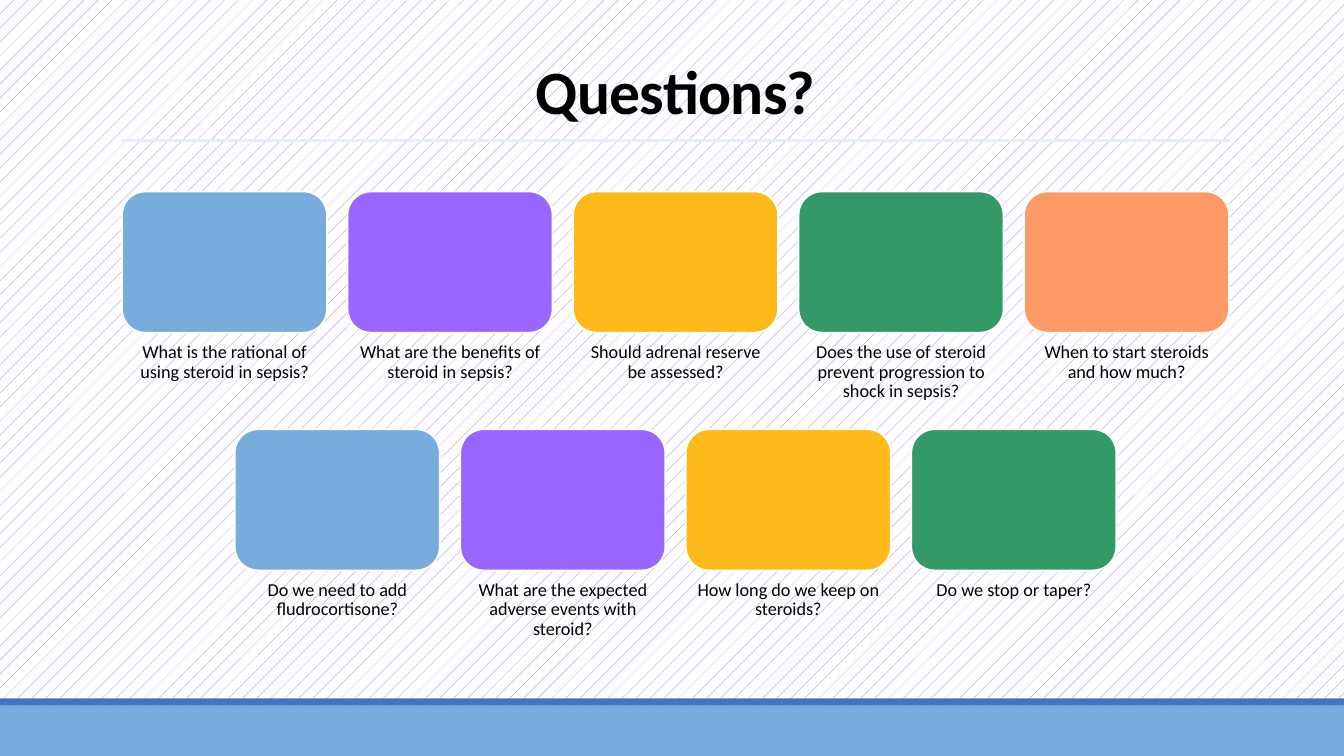
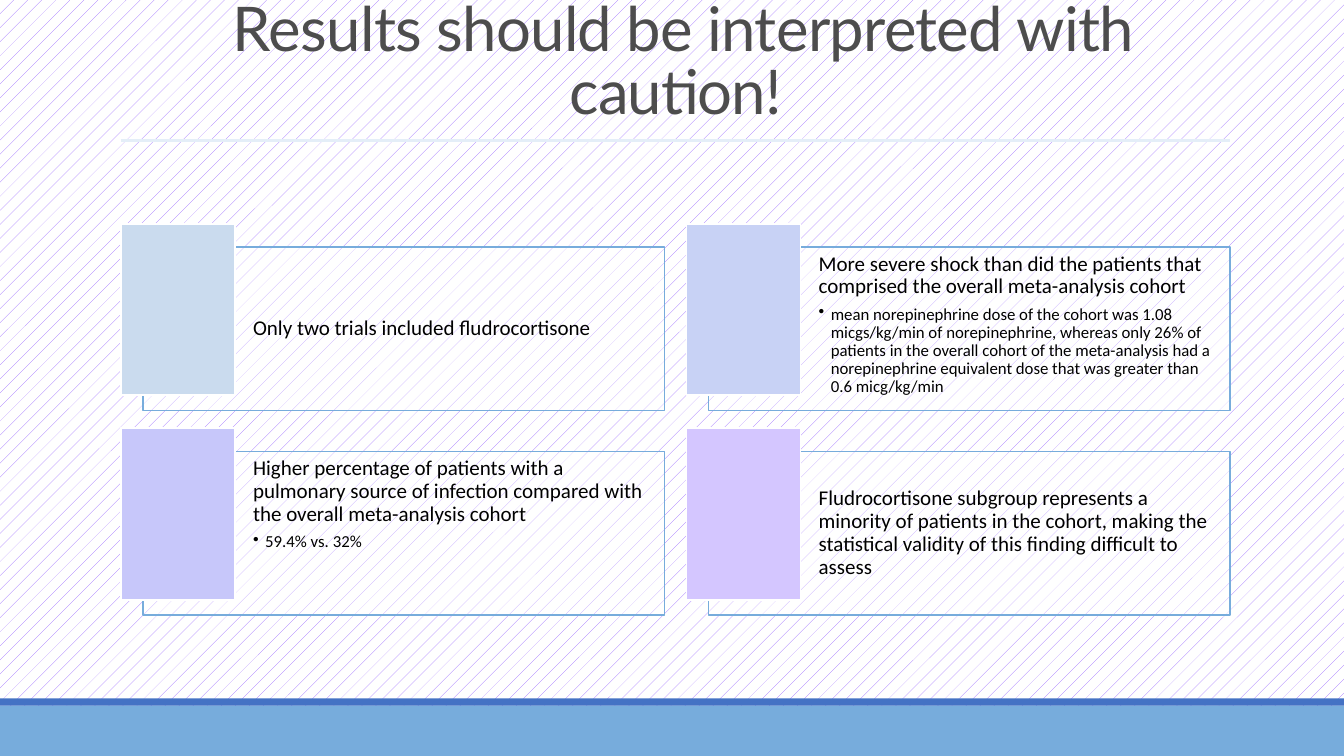
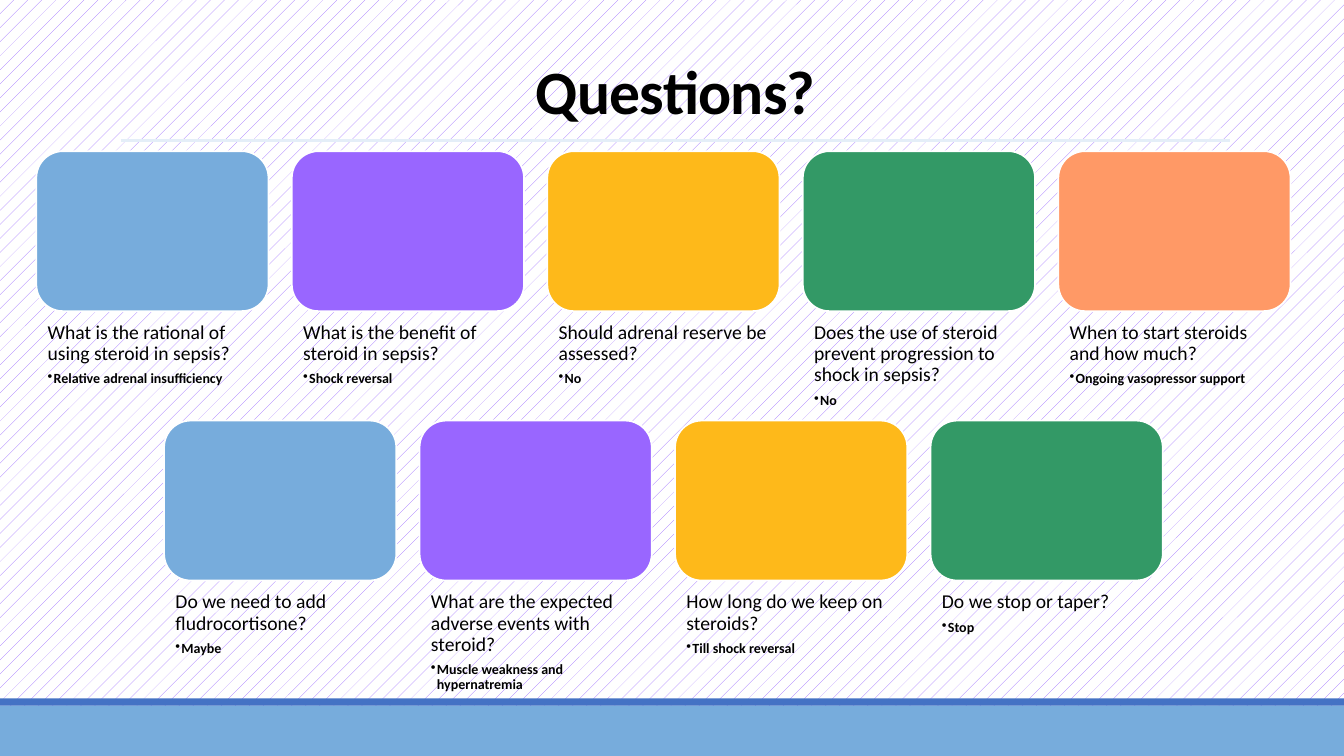
from dataclasses import dataclass
from itertools import zip_longest

from lxml.etree import SubElement
from pptx import Presentation
from pptx.dml.color import RGBColor as RGB
from pptx.enum.dml import MSO_PATTERN as PATTERN
from pptx.enum.shapes import MSO_CONNECTOR as WIRE, MSO_SHAPE as SHAPE
from pptx.enum.text import MSO_ANCHOR as ANCHOR, MSO_AUTO_SIZE as AUTO, PP_ALIGN as ALIGN
from pptx.oxml.ns import qn
from pptx.util import Inches, Pt


@dataclass(frozen=True)
class Theme:
    ink: str = "000000"
    soft: str = "4D4D4D"
    paper: str = "FFFFFF"
    blue: str = "77ACDC"
    strip: str = "4472C4"
    rule: str = "E4EEF8"
    hatch: str = "9966FF"
    tiles: tuple = ("77ACDC", "9966FF", "FEB91A", "339966", "FF9966")
    tabs: tuple = ("CADBEE", "C8D2F5", "C7C7FA", "D4C6FF")
    font: str = "Calibri"
    alt: str = "Lato"
    head: int = 44
    edge: float = 1.25


T = Theme()
WIDE, HIGH = 13.33, 7.5

ASKS = [
    "What is the rational of using steroid in sepsis?",
    "What are the benefits of steroid in sepsis?",
    "Should adrenal reserve be assessed?",
    "Does the use of steroid prevent progression to shock in sepsis?",
    "When to start steroids and how much?",
    "Do we need to add fludrocortisone?",
    "What are the expected adverse events with steroid?",
    "How long do we keep on steroids?",
    "Do we stop or taper?",
]
REASKS = [ASKS[0], "What is the benefit of steroid in sepsis?", *ASKS[2:]]
REPLIES = [
    "Relative adrenal insufficiency", "Shock reversal", "No", "No",
    "Ongoing vasopressor support", "Maybe", "Muscle weakness and hypernatremia",
    "Till shock reversal", "Stop",
]
LIMITS = [
    ("Only two trials included fludrocortisone", None),
    ("More severe shock than did the patients that comprised the overall meta-analysis cohort",
     "mean norepinephrine dose of the cohort was 1.08 micgs/kg/min of norepinephrine, "
     "whereas only 26% of patients in the overall cohort of the meta-analysis had a "
     "norepinephrine equivalent dose that was greater than 0.6 micg/kg/min"),
    ("Higher percentage of patients with a pulmonary source of infection compared with "
     "the overall meta-analysis cohort", "59.4% vs. 32%"),
    ("Fludrocortisone subgroup represents a minority of patients in the cohort, making the "
     "statistical validity of this finding difficult to assess", None),
]


def apply(item, **style):
    for key, value in style.items():
        setattr(item, key, value)


def place(x, y, w, h):
    return [Inches(n) for n in (x, y, w, h)]


def block(slide, kind, box, fill, line=None, width=T.edge, alpha=None):
    """Add a flat preset shape; alpha is its opacity in percent."""
    shape = slide.shapes.add_shape(kind, *place(*box))
    shape.shadow.inherit = False
    shape.fill.solid()
    shape.fill.fore_color.rgb = RGB.from_string(fill)
    if alpha:
        tint = shape.element.spPr.find(qn("a:solidFill"))[0]
        SubElement(tint, qn("a:alpha"), val=str(alpha * 1000))
    if line:
        shape.line.color.rgb = RGB.from_string(line)
        shape.line.width = Pt(width)
    else:
        shape.line.fill.background()
    return shape


def pad(frame, left, top, right, low, **style):
    sides = dict(margin_left=left, margin_top=top, margin_right=right, margin_bottom=low)
    apply(frame, word_wrap=True, **{k: Inches(v) for k, v in sides.items()}, **style)


def write(para, text, size, color=T.ink, name=T.font, bold=False):
    run = para.add_run()
    run.text = text
    apply(run.font, size=Pt(size), name=name, bold=bold)
    run.font.color.rgb = RGB.from_string(color)
    return run


def fill_text(frame, lead, point, sizes, hang, align=ALIGN.LEFT, bold=False):
    """Write a lead line and, if given, one bulleted point below it."""
    para = frame.paragraphs[0]
    apply(para, alignment=align, line_spacing=0.9, space_after=Pt(sizes[0] * 0.35))
    write(para, lead, sizes[0])
    if point:
        para = frame.add_paragraph()
        props = para._p.get_or_add_pPr()
        props.set("marL", str(Inches(hang)))
        props.set("indent", str(-Inches(hang)))
        SubElement(props, qn("a:buChar"), char="•")
        apply(para, level=1, alignment=align, line_spacing=0.9,
              space_after=Pt(sizes[1] * 0.15))
        write(para, point, sizes[1], bold=bold)


def set_frame(deck, layout):
    """Give the master its hatch, bands and rule, and the layout its title box."""
    master = deck.slide_master
    back = master.background.fill
    back.patterned()
    back.pattern = PATTERN.PERCENT_5
    back.fore_color.rgb = RGB.from_string(T.hatch)
    back.back_color.rgb = RGB.from_string(T.paper)

    title = layout.placeholders[0]
    apply(title, **dict(zip(("left", "top", "width", "height"), place(1.2, 0.23, 11, 1.08))))

    slide = deck.slides[0]
    rule = slide.shapes.add_connector(WIRE.STRAIGHT, *place(1.2, 1.39, 12.2, 1.39))
    rule.line.color.rgb = RGB.from_string(T.rule)
    rule.line.width = Pt(2.25)
    SubElement(rule.element.spPr, qn("a:effectLst"))
    parts = [
        block(slide, SHAPE.RECTANGLE, (0, 7, WIDE, 0.5), T.blue),
        block(slide, SHAPE.RECTANGLE, (0, 6.93, WIDE, 0.07), T.strip),
        rule,
    ]
    for part in parts:
        master.shapes.element.append(part.element)


def set_title(slide, text, **style):
    frame = slide.shapes.title.text_frame
    apply(frame, vertical_anchor=ANCHOR.BOTTOM, auto_size=AUTO.NONE, word_wrap=True)
    para = frame.paragraphs[0]
    apply(para, alignment=ALIGN.CENTER, line_spacing=0.85)
    run = write(para, text, T.head, **style)
    run._r.get_or_add_rPr().set("spc", "-50")


def tile_grid(slide, left, top, width, asks, replies, sizes, align, cols=5):
    """Lay captioned tiles in centred rows; every measure follows the tile width."""
    w = width / (cols + 0.1 * (cols - 1))
    step, tall, note, inset = w * 1.1, w * 0.689, w * 0.371, w * 0.049
    pairs = list(zip_longest(asks, replies))
    for row in range(0, len(pairs), cols):
        group = pairs[row:row + cols]
        x0 = left + (cols - len(group)) * step / 2
        y = top + row // cols * (tall + note + w * 0.1)
        for col, (ask, reply) in enumerate(group):
            x = x0 + col * step
            block(slide, SHAPE.ROUNDED_RECTANGLE, (x, y, w, tall), T.tiles[col], T.paper)
            text = slide.shapes.add_textbox(*place(x, y + tall, w, note))
            pad(text.text_frame, inset, inset, inset, 0)
            fill_text(text.text_frame, ask, reply, sizes, 0.06, align, bold=True)


def card(slide, x, y, tab, lead, point):
    """Draw a framed note with a coloured tab over its top left corner."""
    panel = block(slide, SHAPE.RECTANGLE, (x + 0.22, y + 0.23, 5.17, 1.62),
                  T.paper, T.blue, 1, alpha=40)
    pad(panel.text_frame, 1.09, 0.06, 0.06, 0.06,
        vertical_anchor=ANCHOR.TOP if point else ANCHOR.MIDDLE)
    fill_text(panel.text_frame, lead, point, (15, 12), 0.12)
    block(slide, SHAPE.RECTANGLE, (x, y, 1.13, 1.7), tab, T.paper)


def card_grid(slide, left, top):
    for i, (tab, (lead, point)) in enumerate(zip(T.tabs, LIMITS)):
        row, col = divmod(i, 2)
        card(slide, left + col * 5.61, top + row * 2.03, tab, lead, point)


def main():
    deck = Presentation()
    apply(deck, slide_width=Inches(WIDE), slide_height=Inches(HIGH))
    layout = deck.slide_layouts.get_by_name("Title Only")
    first, mid, last = [deck.slides.add_slide(layout) for _ in range(3)]
    set_frame(deck, layout)

    set_title(first, "Questions?", bold=True)
    tile_grid(first, 1.21, 1.9, 10.98, ASKS, [], (13,), ALIGN.CENTER)

    set_title(mid, " Results should be interpreted with caution!",
              color=T.soft, name=T.alt)
    card_grid(mid, 1.2, 2.22)

    set_title(last, "Questions?", bold=True)
    tile_grid(last, 0.36, 1.5, 12.44, REASKS, REPLIES, (14, 10), ALIGN.LEFT)

    deck.save("out.pptx")


if __name__ == "__main__":
    main()
